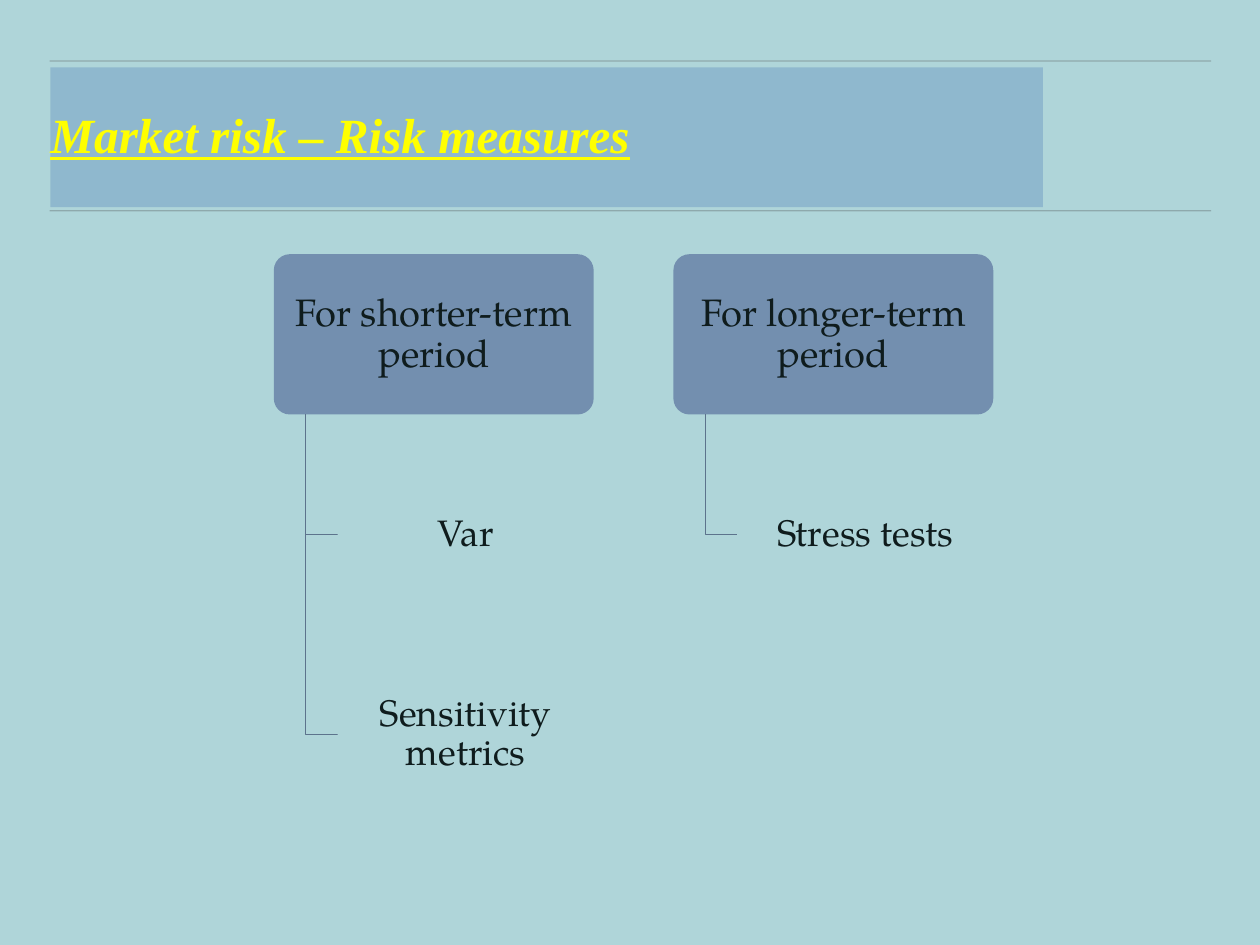
from dataclasses import dataclass

from lxml import etree
from pptx import Presentation
from pptx.dml.color import RGBColor
from pptx.enum.shapes import MSO_CONNECTOR, MSO_SHAPE
from pptx.enum.text import MSO_ANCHOR, PP_ALIGN
from pptx.oxml.ns import qn
from pptx.util import Inches, Pt

RECTANGLE = MSO_SHAPE.RECTANGLE
ROUNDED = MSO_SHAPE.ROUNDED_RECTANGLE
STRAIGHT = MSO_CONNECTOR.STRAIGHT
MIDDLE = MSO_ANCHOR.MIDDLE
LEFT, CENTER = PP_ALIGN.LEFT, PP_ALIGN.CENTER

TITLE = "Market risk – Risk measures"
GROUPS = [
    ("For shorter-term period", ["Var", "Sensitivity metrics"]),
    ("For longer-term period", ["Stress tests"]),
]


@dataclass(frozen=True)
class Theme:
    background: str = "AFD5D9"
    title_fill: str = "8FB8CE"
    title_text: str = "FFFF00"
    header_fill: str = "738FAF"
    text: str = "0F1C1D"
    branch: str = "5C738C"
    rule: str = "444444"
    title_font: str = "Times New Roman"
    body_font: str = "TeX Gyre Pagella"
    title_size: int = 40
    header_size: int = 31
    measure_size: int = 30


THEME = Theme()

# Layout in inches
RULE_LEFT, RULE_RIGHT = 0.56, 13.67
RULE_TOPS = (0.69, 2.38)
TITLE_BOX = (0.57, 0.76, 11.2, 1.58)
TREE_LEFT, TREE_TOP = 3.09, 2.87
COLUMN_STEP, ROW_STEP = 4.51, 2.257
HEADER_WIDTH, MEASURE_WIDTH, BOX_HEIGHT = 3.61, 2.89, 1.81
BRANCH_INDENT, MEASURE_INDENT = 0.36, 0.72


def color(value):
    return RGBColor.from_string(value)


def set_opacity(properties, percent):
    """Make the solid fill found inside a properties element see-through."""
    fill_color = next(properties.iter(qn("a:srgbClr")))
    etree.SubElement(fill_color, qn("a:alpha"), val=str(percent * 1000))


def add_box(slide, kind, box, fill):
    shape = slide.shapes.add_shape(kind, *map(Inches, box))
    shape.shadow.inherit = False
    shape.fill.solid()
    shape.fill.fore_color.rgb = color(fill)
    shape.line.fill.background()
    return shape


def write_text(shape, text, font_name, size, text_color, alignment, margins):
    frame = shape.text_frame
    frame.word_wrap = True
    frame.vertical_anchor = MIDDLE
    frame.margin_left = frame.margin_right = Inches(margins[0])
    frame.margin_top = frame.margin_bottom = Inches(margins[1])
    paragraph = frame.paragraphs[0]
    paragraph.alignment = alignment
    paragraph.line_spacing = 0.9
    run = paragraph.add_run()
    run.text = text
    run.font.name = font_name
    run.font.size = Pt(size)
    run.font.color.rgb = color(text_color)
    return run


def add_rule(slide, top):
    rule = slide.shapes.add_connector(
        STRAIGHT, Inches(RULE_LEFT), Inches(top), Inches(RULE_RIGHT), Inches(top))
    rule.line.width = Pt(1)
    rule.line.color.rgb = color(THEME.rule)
    properties = rule.line._get_or_add_ln()
    set_opacity(properties, 30)
    etree.SubElement(properties.getparent(), qn("a:effectLst"))


def add_title(slide):
    shape = add_box(slide, RECTANGLE, TITLE_BOX, THEME.title_fill)
    run = write_text(shape, TITLE, THEME.title_font, THEME.title_size,
                     THEME.title_text, LEFT, (0, 0))
    run.font.bold = run.font.italic = run.font.underline = True


def add_node(slide, text, left, top, width, fill, size):
    shape = add_box(slide, ROUNDED, (left, top, width, BOX_HEIGHT), fill)
    shape.adjustments[0] = 0.1
    write_text(shape, text, THEME.body_font, size, THEME.text, CENTER, (0.06, 0.04))
    return shape


def add_branch(slide, left, top, right, bottom):
    """Draw an elbow down from a header and across to one of its measures."""
    builder = slide.shapes.build_freeform(Inches(left), Inches(top))
    corners = [(left, bottom), (right, bottom)]
    builder.add_line_segments(
        [(Inches(x), Inches(y)) for x, y in corners], close=False)
    branch = builder.convert_to_shape()
    branch.shadow.inherit = False
    branch.fill.background()
    branch.line.color.rgb = color(THEME.branch)
    branch.line.width = Pt(1)


def add_group(slide, header, measures, left):
    add_node(slide, header, left, TREE_TOP, HEADER_WIDTH,
             THEME.header_fill, THEME.header_size)
    measure_left = left + MEASURE_INDENT
    for row, measure in enumerate(measures, start=1):
        top = TREE_TOP + row * ROW_STEP
        add_branch(slide, left + BRANCH_INDENT, TREE_TOP + BOX_HEIGHT,
                   measure_left, top + BOX_HEIGHT / 2)
        node = add_node(slide, measure, measure_left, top, MEASURE_WIDTH,
                        THEME.background, THEME.measure_size)
        set_opacity(node.fill._xPr, 90)


def main():
    presentation = Presentation()
    presentation.slide_width = Inches(14.22)
    presentation.slide_height = Inches(10.67)
    slide = presentation.slides.add_slide(presentation.slide_layouts[6])
    slide.background.fill.solid()
    slide.background.fill.fore_color.rgb = color(THEME.background)

    for top in RULE_TOPS:
        add_rule(slide, top)
    add_title(slide)
    for column, (header, measures) in enumerate(GROUPS):
        add_group(slide, header, measures, TREE_LEFT + column * COLUMN_STEP)

    presentation.save("out.pptx")


if __name__ == "__main__":
    main()
